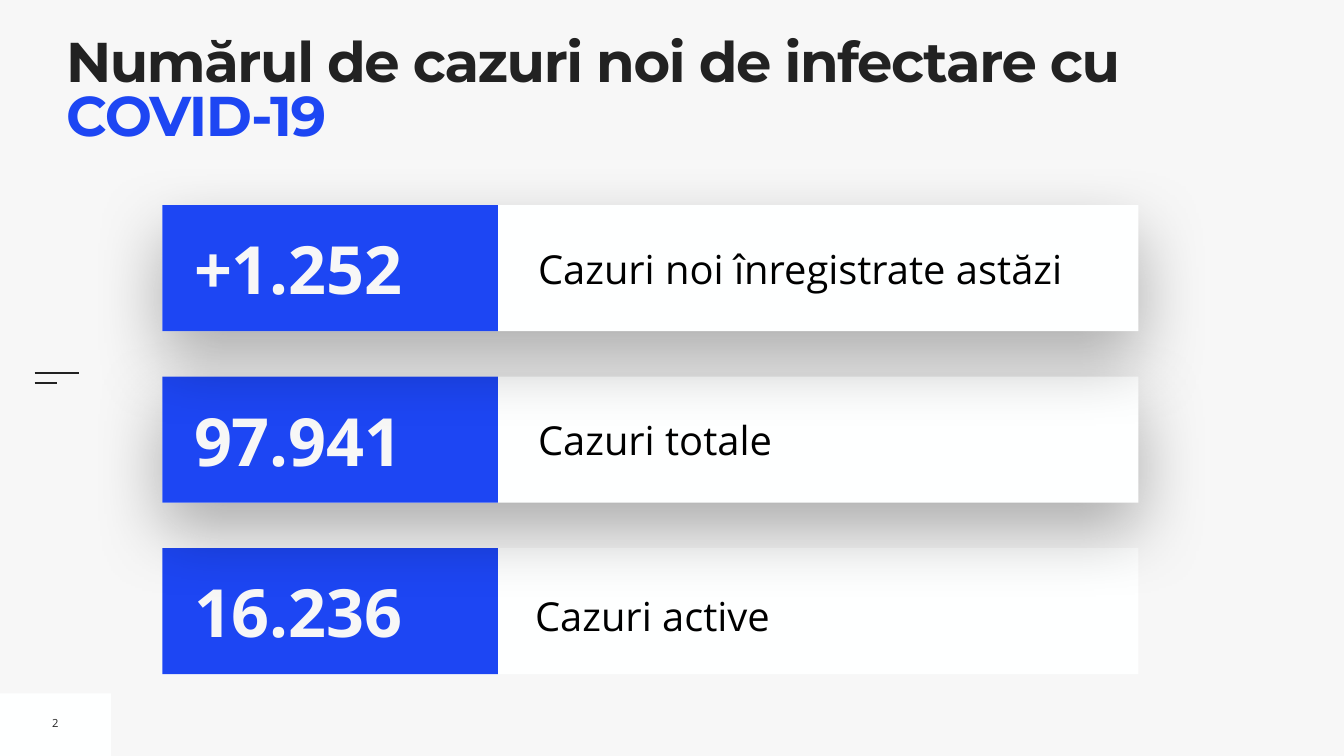
import pptx
import pptx.util
import pptx.dml.color
import pptx.enum.shapes
import pptx.enum.text
import pptx.oxml
import pptx.oxml.ns
import lxml.etree
from pptx.util import Cm

# Content: value, label, label shift (x, y) in cm, shadow under the card
TITLE = ("Numărul de cazuri noi de infectare cu ", "COVID-19")
CARDS = [
    ("+1.252", "Cazuri noi înregistrate astăzi", (0, 0), True),
    ("97.941", "Cazuri totale", (0, 0), True),
    ("16.236", "Cazuri active", (-0.15, 0.23), False),
]
PAGE = "2"

THEME = {
    "back": "F7F7F7", "card": "FEFFFF", "blue": "1D46F3",
    "ink": "222222", "label": "000000", "value": "F7F7F7",
    "head": "Montserrat", "body": "Open Sans",
    "title": 80, "number": 95, "text": 57, "page": 16,
}

# Card grid in cm
LEFT, TOP, WIDE, HIGH, STEP = 8.18, 10.34, 49.2, 6.35, 8.64
BLUE = 16.92
VALUE_X, VALUE_W = 1.35, 15.3
LABEL_X, LABEL_W = 18.69, 29.87
RULES = [(18.82, 2.24), (19.28, 1.12)]  # y, length

SHADOW = (
    '<a:effectLst xmlns:a="http://schemas.openxmlformats.org/drawingml/2006/main">'
    '<a:outerShdw blurRad="1270000" dist="508000" dir="5400000" rotWithShape="0">'
    '<a:srgbClr val="000000"><a:alpha val="30000"/></a:srgbClr>'
    '</a:outerShdw></a:effectLst>'
)


def color(name):
    return pptx.dml.color.RGBColor.from_string(THEME[name])


def style(font, face, size, tint, bold=False):
    font.name = THEME[face]
    font.size = pptx.util.Pt(THEME[size])
    font.color.rgb = color(tint)
    font.bold = bold


def add_box(shapes, x, y, w, h, fill, shade=False):
    box = shapes.add_shape(pptx.enum.shapes.MSO_SHAPE.RECTANGLE,
                           Cm(x), Cm(y), Cm(w), Cm(h))
    box.fill.solid()
    box.fill.fore_color.rgb = color(fill)
    box.line.fill.background()
    if shade:
        box._element.spPr.append(pptx.oxml.parse_xml(SHADOW))
    else:
        box.shadow.inherit = False


def add_text(shapes, x, y, w, h, text, size, tint, bold=False):
    box = shapes.add_textbox(Cm(x), Cm(y), Cm(w), Cm(h))
    frame = box.text_frame
    frame.word_wrap = True
    frame.vertical_anchor = pptx.enum.text.MSO_ANCHOR.MIDDLE
    frame.margin_left = frame.margin_right = Cm(0.25)
    frame.margin_top = frame.margin_bottom = Cm(0.25)
    para = frame.paragraphs[0]
    para.text = text
    style(para.font, "body", size, tint, bold)
    return para


def add_rule(shapes, y, size):
    rule = shapes.add_connector(pptx.enum.shapes.MSO_CONNECTOR.STRAIGHT,
                                Cm(1.75), Cm(y), Cm(1.75 + size), Cm(y))
    rule.line.color.rgb = color("ink")
    rule.line.width = pptx.util.Pt(3)
    lxml.etree.SubElement(rule._element.spPr, pptx.oxml.ns.qn("a:effectLst"))


def set_title(title):
    title.left, title.top = Cm(3.33), Cm(1.98)
    title.width, title.height = Cm(60.81), Cm(4.01)
    frame = title.text_frame
    frame.word_wrap = True
    frame.auto_size = pptx.enum.text.MSO_AUTO_SIZE.NONE
    frame.vertical_anchor = pptx.enum.text.MSO_ANCHOR.TOP
    frame.margin_left = frame.margin_right = 0
    frame.margin_top = frame.margin_bottom = 0
    para = frame.paragraphs[0]
    para.alignment = pptx.enum.text.PP_ALIGN.LEFT
    para.line_spacing = 0.8
    for text, tint in zip(TITLE, ("ink", "blue")):
        run = para.add_run()
        run.text = text
        style(run.font, "head", "title", tint, True)
        run._r.get_or_add_rPr().set("spc", "-200")


def add_card(slide, row, card):
    value, label, (dx, dy), shade = card
    top = TOP + row * STEP
    shapes = slide.shapes.add_group_shape().shapes
    add_box(shapes, LEFT, top, WIDE, HIGH, "card", shade)
    add_text(shapes, LEFT + LABEL_X + dx, top + dy, LABEL_W, HIGH,
             label, "text", "label")
    add_box(shapes, LEFT, top, BLUE, HIGH, "blue")
    add_text(shapes, LEFT + VALUE_X, top, VALUE_W, HIGH,
             value, "number", "value", True)


def main():
    deck = pptx.Presentation()
    deck.slide_width, deck.slide_height = Cm(67.74), Cm(38.1)
    slide = deck.slides.add_slide(deck.slide_layouts[5])
    slide.background.fill.solid()
    slide.background.fill.fore_color.rgb = color("back")

    # Page corner and side rules
    add_box(slide.shapes, 0, 34.95, 5.59, 3.15, "card")
    for y, size in RULES:
        add_rule(slide.shapes, y, size)
    page = add_text(slide.shapes, 1.79, 35.79, 2, 1.3, PAGE, "page", "ink")
    page.alignment = pptx.enum.text.PP_ALIGN.CENTER

    set_title(slide.shapes.title)

    # Lowest card first, so each shadow falls on the card below
    for row, card in reversed(list(enumerate(CARDS))):
        add_card(slide, row, card)

    deck.save("out.pptx")


if __name__ == "__main__":
    main()
